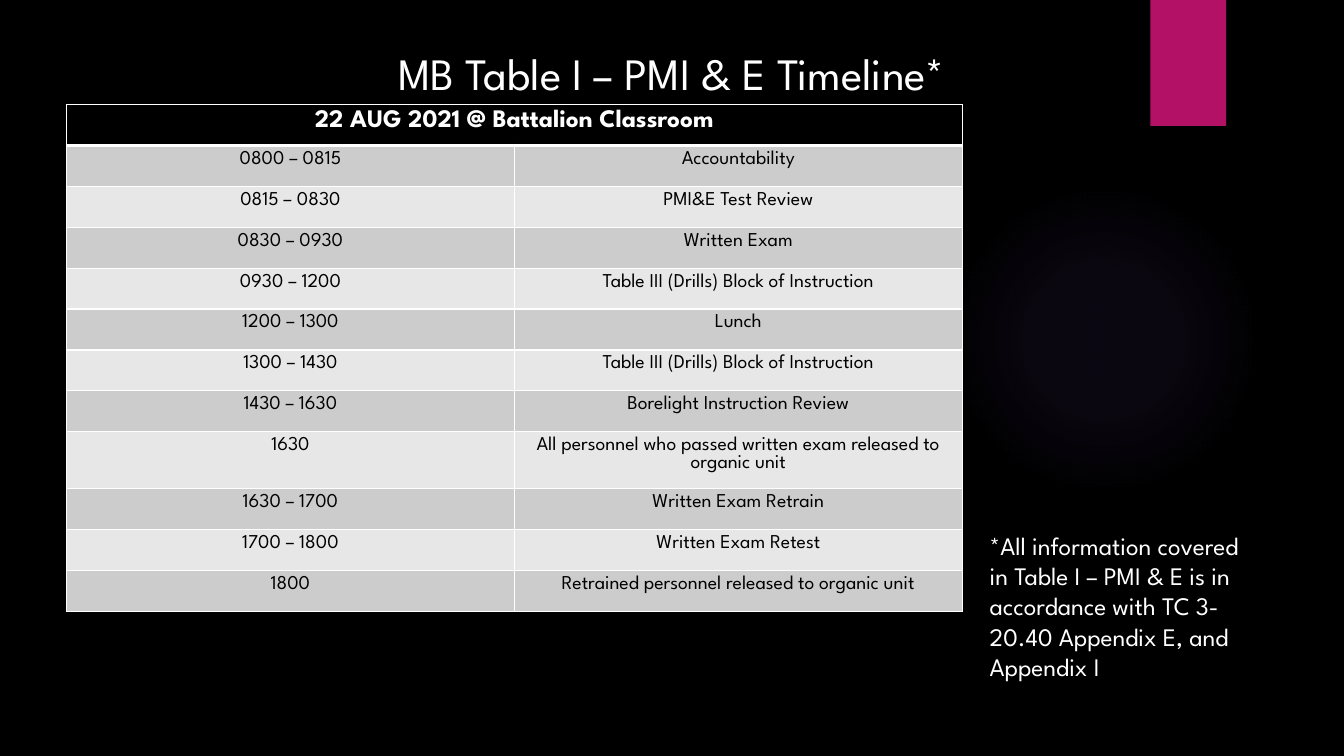
import pptx
import pptx.dml.color
import pptx.enum.shapes
import pptx.enum.text
import pptx.oxml
import pptx.oxml.ns
import pptx.util
from collections import namedtuple
from dataclasses import dataclass

Box = namedtuple("Box", "left top width height")
ALIGN = pptx.enum.text.PP_ALIGN
SHAPE = pptx.enum.shapes.MSO_SHAPE


@dataclass(frozen=True)
class Theme:
    font: str = "League Spartan"
    black: str = "000000"
    white: str = "FFFFFF"
    ribbon: str = "B31166"
    glow: str = "9B6BF2"
    bands: tuple = ("CCCCCC", "E7E7E7")
    title: int = 32
    body: int = 18
    cell: int = 14


THEME = Theme()
HEADING = "22 AUG 2021 @ Battalion Classroom"
TIMELINE = [
    ("0800 – 0815", "Accountability"),
    ("0815 – 0830", "PMI&E Test Review"),
    ("0830 – 0930", "Written Exam"),
    ("0930 – 1200", "Table III (Drills) Block of Instruction"),
    ("1200 – 1300", "Lunch"),
    ("1300 – 1430", "Table III (Drills) Block of Instruction"),
    ("1430 – 1630", "Borelight Instruction Review"),
    ("1630", "All personnel who passed written exam released to organic unit"),
    ("1630 – 1700", "Written Exam Retrain"),
    ("1700 – 1800", "Written Exam Retest"),
    ("1800", "Retrained personnel released to organic unit"),
]
NOTE = ("*All information covered in Table I – PMI & E is in accordance "
        "with TC 3-20.40 Appendix E, and Appendix I")


def rgb(color):
    return pptx.dml.color.RGBColor.from_string(color)


def share(prs, left, top, width, height):
    """Box from percentages of the slide's width and height."""
    w, h = prs.slide_width / 100, prs.slide_height / 100
    return Box(int(left * w), int(top * h), int(width * w), int(height * h))


def parse_drawing(tag, attrs, inner):
    ns = pptx.oxml.ns.nsdecls("a")
    return pptx.oxml.parse_xml(f"<a:{tag} {ns} {attrs}>{inner}</a:{tag}>")


def write(p, text, size, color, align, bold=False):
    p.alignment = align
    r = p.add_run()
    r.text = text
    r.font.name = THEME.font
    r.font.size = pptx.util.Pt(size)
    r.font.bold = bold
    r.font.color.rgb = rgb(color)


def add_plain_shape(s, kind, box):
    sp = s.shapes.add_shape(kind, *box)
    sp.shadow.inherit = False
    sp.line.fill.background()
    return sp


def add_glow(s, box):
    sp = add_plain_shape(s, SHAPE.OVAL, box)
    sp.fill.background()
    stops = "".join(
        f'<a:gs pos="{pos * 1000}"><a:srgbClr val="{THEME.glow}">'
        f'<a:alpha val="{alpha * 1000}"/></a:srgbClr></a:gs>'
        for pos, alpha in ((0, 7), (36, 6), (69, 0)))
    center = " ".join(f'{side}="50000"' for side in "ltrb")
    gradient = parse_drawing(
        "gradFill", 'rotWithShape="1"',
        f'<a:gsLst>{stops}</a:gsLst><a:path path="circle">'
        f"<a:fillToRect {center}/></a:path>")
    props = sp._element.spPr
    props.replace(props.find(pptx.oxml.ns.qn("a:noFill")), gradient)


def add_ribbon(s, box):
    sp = add_plain_shape(s, SHAPE.RECTANGLE, box)
    sp.fill.solid()
    sp.fill.fore_color.rgb = rgb(THEME.ribbon)


def add_text(s, box, text, size, align, wrap):
    tf = s.shapes.add_textbox(*box).text_frame
    tf.word_wrap = wrap
    write(tf.paragraphs[0], text, size, THEME.white, align)


def style_cell(cell, fill, top=1, bottom=1):
    cell.fill.solid()
    cell.fill.fore_color.rgb = rgb(fill)
    props = cell._tc.get_or_add_tcPr()
    for i, (side, width) in enumerate(zip("LRTB", (1, 1, top, bottom))):
        props.insert(i, parse_drawing(
            f"ln{side}", f'w="{pptx.util.Pt(width)}"',
            f'<a:solidFill><a:srgbClr val="{THEME.white}"/></a:solidFill>'))


def add_timeline(s, box):
    table = s.shapes.add_table(len(TIMELINE) + 1, 2, *box).table
    for cell in table.rows[0].cells:
        style_cell(cell, THEME.black, bottom=3)
    heading = table.cell(0, 0)
    heading.merge(table.cell(0, 1))
    write(heading.text_frame.paragraphs[0], HEADING, THEME.body,
          THEME.white, ALIGN.CENTER, bold=True)
    for i, entry in enumerate(TIMELINE):
        for cell, text in zip(table.rows[i + 1].cells, entry):
            style_cell(cell, THEME.bands[i % 2], top=3 if i == 0 else 1)
            write(cell.text_frame.paragraphs[0], text, THEME.cell,
                  THEME.black, ALIGN.CENTER)


def add_timeline_slide(prs):
    s = prs.slides.add_slide(prs.slide_layouts[6])
    s.background.fill.solid()
    s.background.fill.fore_color.rgb = rgb(THEME.black)
    add_glow(s, share(prs, 70.58, 24.4, 23.1, 41.07))
    add_ribbon(s, share(prs, 85.6, 0, 5.63, 16.67))
    add_text(s, share(prs, 28.05, 5.33, 43.88, 8.53),
             "MB Table I – PMI & E Timeline*", THEME.title, ALIGN.CENTER, False)
    row_height = 5.41
    add_timeline(s, share(prs, 4.95, 13.85, 66.65,
                          row_height * (len(TIMELINE) + 1)))
    add_text(s, share(prs, 72.9, 69.47, 20.25, 25.6),
             NOTE, THEME.body, ALIGN.LEFT, True)


def main():
    prs = pptx.Presentation()
    prs.slide_width = pptx.util.Inches(13.33)
    prs.slide_height = pptx.util.Inches(7.5)
    add_timeline_slide(prs)
    prs.save("out.pptx")


if __name__ == "__main__":
    main()
